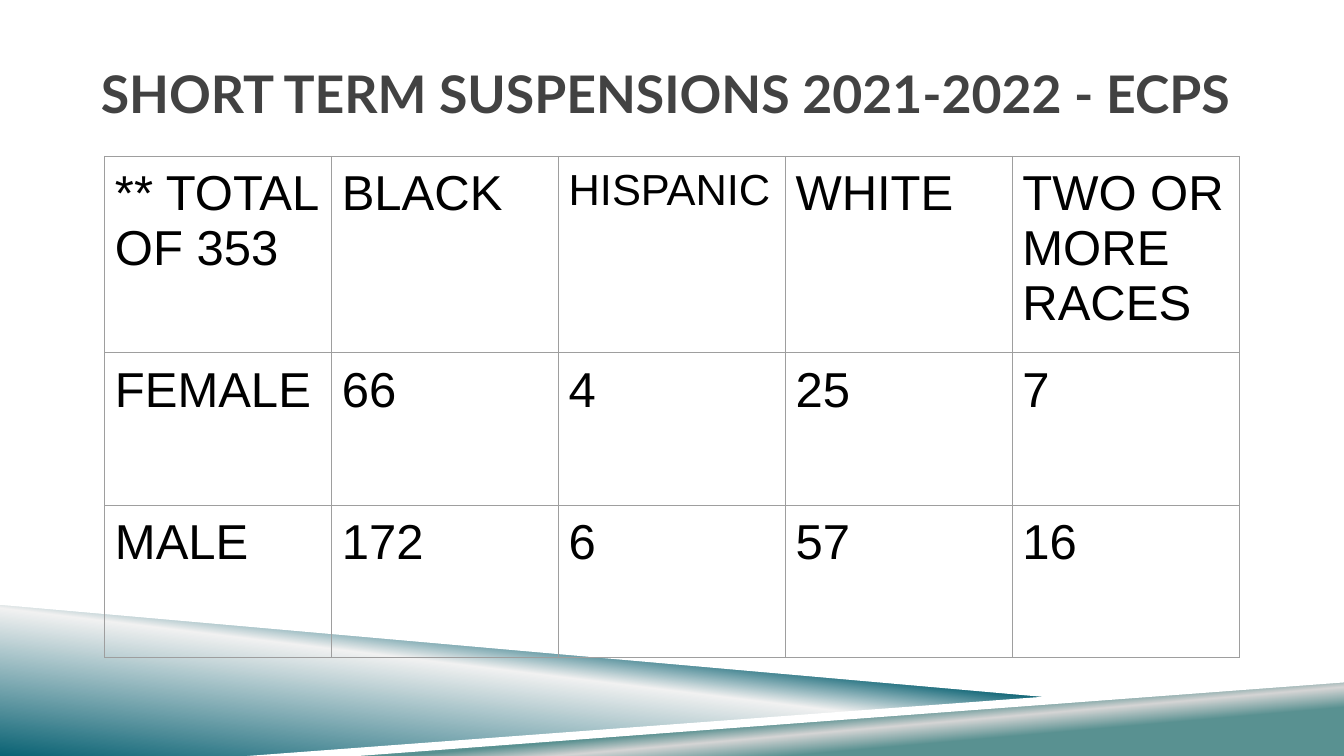
from lxml.etree import SubElement
from pptx import Presentation
from pptx.dml.color import RGBColor
from pptx.enum.text import MSO_ANCHOR
from pptx.oxml.ns import qn
from pptx.util import Inches, Pt


def paint(code):
    return RGBColor.from_string(code)


class Deck:
    """Hold the style and the current slide, and draw each kind of element."""

    head_font, body_font = "Lato", "Arial"
    head_ink, body_ink, rule = "424242", "000000", "9E9E9E"

    def __init__(self, width, height):
        self.show = Presentation()
        self.show.slide_width = Inches(width)
        self.show.slide_height = Inches(height)
        self.slide = self.show.slides.add_slide(self.show.slide_layouts[6])

    def add_text(self, para, text, size, font, ink, bold=False):
        run = para.add_run()
        run.text = text
        run.font.size = Pt(size)
        run.font.name = font
        run.font.bold = bold
        run.font.color.rgb = paint(ink)

    def wedge(self, points):
        first, *rest = [(Inches(x), Inches(y)) for x, y in points]
        maker = self.slide.shapes.build_freeform(*first)
        maker.add_line_segments(rest, close=True)
        shape = maker.convert_to_shape()
        shape.shadow.inherit = False
        shape.line.fill.background()
        return shape

    def plain(self, points, color):
        shape = self.wedge(points)
        shape.fill.solid()
        shape.fill.fore_color.rgb = paint(color)

    def blend(self, points, stops, angle):
        shape = self.wedge(points)
        shape.fill.gradient()
        grad = shape._element.spPr.find(qn("a:gradFill"))
        grad.find(qn("a:lin")).set("ang", str(angle * 60000))
        group = grad.find(qn("a:gsLst"))
        for old in list(group):
            group.remove(old)
        for place, color in stops:
            stop = SubElement(group, qn("a:gs"), pos=str(place * 1000))
            SubElement(stop, qn("a:srgbClr"), val=color)

    def title(self, text, left, top, width, height):
        box = self.slide.shapes.add_textbox(
            Inches(left), Inches(top), Inches(width), Inches(height))
        frame = box.text_frame
        frame.word_wrap = True
        frame.vertical_anchor = MSO_ANCHOR.MIDDLE
        frame.margin_left = frame.margin_right = 0
        self.add_text(frame.paragraphs[0], text, 37, self.head_font, self.head_ink, True)

    def edge(self, cell):
        props = cell._tc.get_or_add_tcPr()
        for side in ("lnL", "lnR", "lnT", "lnB"):
            line = SubElement(props, qn("a:" + side), w=str(Pt(0.75)))
            solid = SubElement(line, qn("a:solidFill"))
            SubElement(solid, qn("a:srgbClr"), val=self.rule)

    def table(self, rows, left, top, wide, tall, sizes):
        count, span = len(rows), len(rows[0])
        grid = self.slide.shapes.add_table(
            count, span, Inches(left), Inches(top),
            Inches(wide * span), Inches(tall * count)).table
        grid.first_row = grid.horz_banding = False
        for r, row in enumerate(rows):
            for c, text in enumerate(row):
                cell = grid.cell(r, c)
                cell.margin_left = cell.margin_right = Inches(0.1)
                cell.margin_top = cell.margin_bottom = Inches(0.1)
                self.edge(cell)
                cell.fill.background()
                self.add_text(cell.text_frame.paragraphs[0], text,
                              sizes.get(text, 35), self.body_font, self.body_ink)


def main():
    deck = Deck(13.33, 7.5)
    teal, sage = "0B6374", "599191"
    deck.blend([(0, 5.97), (10.56, 6.92), (2.67, 7.5), (0, 7.5)],
               [(0, teal), (52, "F1F1F1"), (66, teal), (100, teal)], 277)
    deck.blend([(2.64, 7.5), (13.33, 6.72), (13.33, 7.5)],
               [(0, sage), (28, sage), (40, "D5D5D5"), (48, sage), (100, sage)], 265)
    deck.plain([(0, 5.92), (0, 6), (10.53, 6.93), (11.08, 6.9)], "FFFFFF")
    deck.plain([(13.33, 6.69), (2.45, 7.5), (3.55, 7.5), (13.33, 6.77)], "FFFFFF")
    deck.title("SHORT TERM SUSPENSIONS 2021-2022 - ECPS", 1, 0.3, 11.33, 1.25)
    rows = [
        ["** TOTAL OF 353", "BLACK", "HISPANIC", "WHITE", "TWO OR MORE RACES"],
        ["FEMALE", "66", "4", "25", "7"],
        ["MALE", "172", "6", "57", "16"],
    ]
    deck.table(rows, 1.04, 1.55, 2.25, 1.51, {"HISPANIC": 31})
    deck.show.save("out.pptx")


if __name__ == "__main__":
    main()
